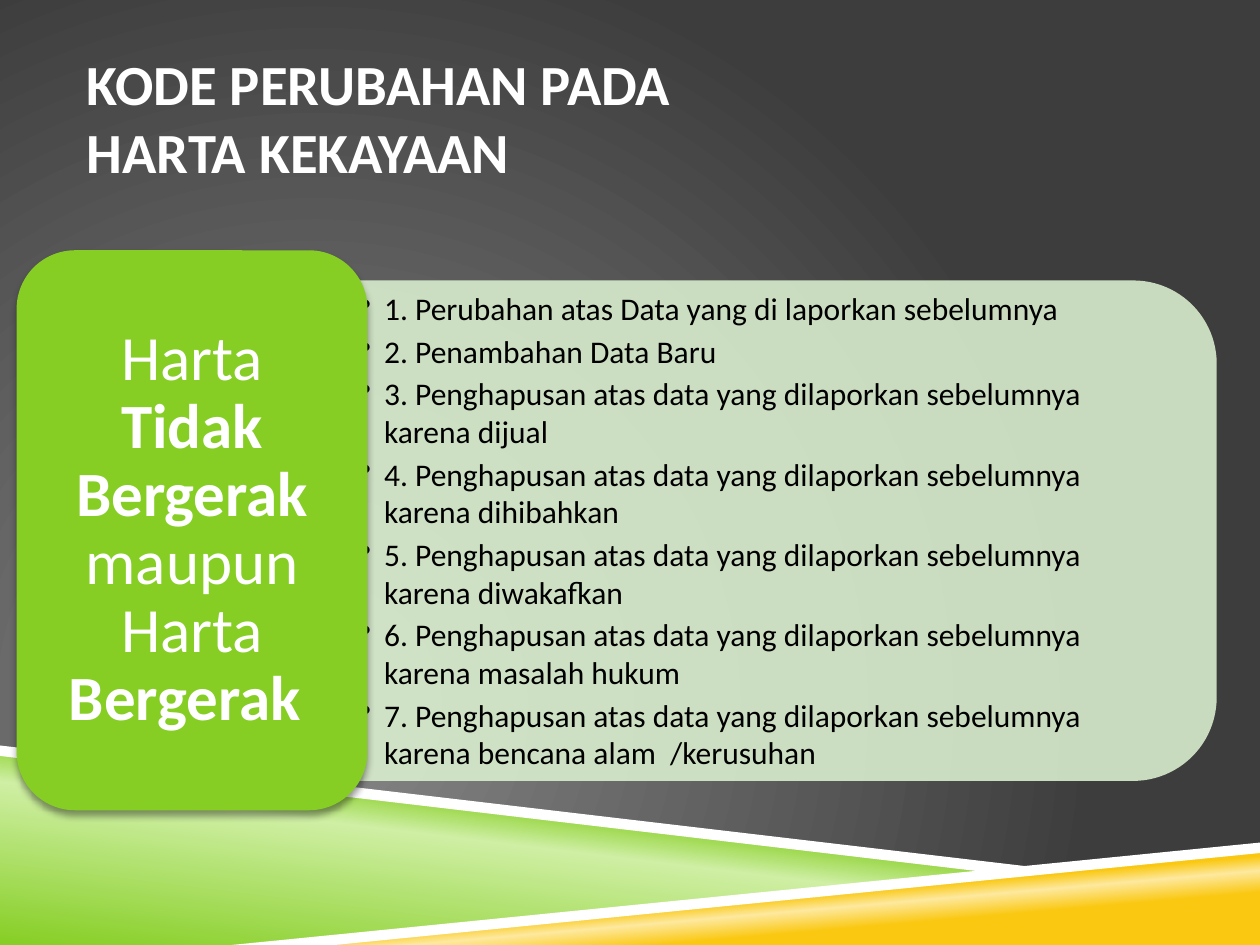
from lxml import etree
from pptx import Presentation
from pptx.dml.color import RGBColor
from pptx.enum.shapes import MSO_SHAPE
from pptx.enum.text import MSO_ANCHOR, MSO_AUTO_SIZE, PP_ALIGN
from pptx.oxml import parse_xml
from pptx.oxml.ns import nsdecls, qn
from pptx.util import Pt

ROUND_RECT = MSO_SHAPE.ROUNDED_RECTANGLE
ROUND_TOP = MSO_SHAPE.ROUND_2_SAME_RECTANGLE
MIDDLE = MSO_ANCHOR.MIDDLE
NO_AUTOFIT = MSO_AUTO_SIZE.NONE
LEFT, CENTER = PP_ALIGN.LEFT, PP_ALIGN.CENTER
FONT = "Calibri"
GREEN, YELLOW, WHITE = "86CE24", "FAC810", "FFFFFF"


def color(hex_code):
    return RGBColor.from_string(hex_code)


def set_gradient(parent, stops, direction):
    """Replace the solid fill inside parent with a gradient."""
    stop_xml = "".join(
        f'<a:gs pos="{pos * 1000}"><a:srgbClr val="{hex_code}"/></a:gs>'
        for pos, hex_code in stops)
    solid = parent.find(qn("a:solidFill"))
    parent.replace(solid, parse_xml(
        f'<a:gradFill {nsdecls("a")} rotWithShape="1">'
        f"<a:gsLst>{stop_xml}</a:gsLst>{direction}</a:gradFill>"))


prs = Presentation()
prs.slide_width, prs.slide_height = Pt(720), Pt(540)
slide = prs.slides.add_slide(prs.slide_layouts[5])
shapes = slide.shapes

# Background: dark radial gradient
slide.background.fill.solid()
set_gradient(
    slide.element.find(".//" + qn("p:bgPr")),
    [(0, "878787"), (100, "3D3D3D")],
    '<a:path path="circle">'
    '<a:fillToRect l="50000" t="100000" r="100000" b="50000"/></a:path>')

# Coloured wedges and their white edges along the bottom
wedges = [
    ([(0, 430), (570, 498), (144, 540), (0, 540)],
     [(0, GREEN), (52, "CFEFA4"), (66, GREEN)], 277),
    ([(142.5, 540), (720, 484), (720, 540)],
     [(28, YELLOW), (40, "FDE99F"), (48, YELLOW)], 265),
    ([(0, 426), (0, 432), (569, 499), (599, 496.5)], None, None),
    ([(720, 481.5), (132.5, 540), (191.5, 540), (720, 487.5)], None, None),
]
for points, stops, angle in wedges:
    corners = [(Pt(x), Pt(y)) for x, y in points]
    outline = shapes.build_freeform(*corners[0])
    outline.add_line_segments(corners[1:], close=True)
    wedge = outline.convert_to_shape()
    wedge.shadow.inherit = False
    wedge.line.fill.background()
    wedge.fill.solid()
    wedge.fill.fore_color.rgb = color(WHITE)
    if stops:
        set_gradient(wedge.element.spPr, stops,
                     f'<a:lin ang="{angle * 60000}" scaled="0"/>')

# Pale panel behind the list, turned so its round side faces right
panel = shapes.add_shape(ROUND_TOP, Pt(298), Pt(49), Pt(286), Pt(508.5))
panel.rotation = 90
panel.shadow.inherit = False
panel.line.fill.background()
panel.fill.solid()
panel.fill.fore_color.rgb = color("D9EDCD")
panel_color = panel.element.spPr.find(".//" + qn("a:srgbClr"))
etree.SubElement(panel_color, qn("a:alpha"), val="90000")

# List of change codes
deletion = "Penghapusan atas data yang dilaporkan sebelumnya karena "
reasons = ["dijual", "dihibahkan", "diwakafkan", "masalah hukum",
           "bencana alam  /kerusuhan"]
codes = ["Perubahan atas Data yang di laporkan sebelumnya",
         "Penambahan Data Baru"] + [deletion + reason for reason in reasons]
code_list = shapes.add_textbox(Pt(186.5), Pt(174), Pt(494), Pt(258)).text_frame
code_list.word_wrap = True
code_list.auto_size = NO_AUTOFIT
code_list.vertical_anchor = MIDDLE
code_list.margin_left = code_list.margin_right = Pt(19.5)
code_list.margin_top = code_list.margin_bottom = Pt(10)
code_list.text = "\n".join(
    f"{number}. {code}" for number, code in enumerate(codes, 1))
for item in code_list.paragraphs:
    item.space_after = Pt(2.7)
    properties = item._p.get_or_add_pPr()
    properties.set("marL", str(Pt(13.5)))
    properties.set("indent", str(-Pt(13.5)))
    etree.SubElement(properties, qn("a:buChar"), char="•")
    item.font.name, item.font.size = FONT, Pt(18)
    item.font.color.rgb = color("000000")

# Green card naming the kinds of property
card = shapes.add_shape(ROUND_RECT, Pt(9.5), Pt(143), Pt(200.5), Pt(320))
card.fill.solid()
card.fill.fore_color.rgb = color(GREEN)
card.line.fill.background()
card.shadow.inherit = False
card.element.spPr.find(qn("a:effectLst")).append(parse_xml(
    f'<a:outerShdw {nsdecls("a")} blurRad="{Pt(4)}" dist="{Pt(3.3)}" '
    'dir="5400000" rotWithShape="0"><a:srgbClr val="000000">'
    '<a:alpha val="40000"/></a:srgbClr></a:outerShdw>'))
card_text = card.text_frame
card_text.word_wrap = True
card_text.vertical_anchor = MIDDLE
card_text.margin_left = card_text.margin_right = Pt(10.8)
card_text.margin_top = card_text.margin_bottom = Pt(5.4)
kinds = card_text.paragraphs[0]
kinds.alignment = CENTER
kinds.line_spacing = 0.9
for words, bold in [("Harta ", False), ("Tidak Bergerak ", True),
                    ("maupun Harta ", False), ("Bergerak ", True)]:
    run = kinds.add_run()
    run.text = words
    run.font.name, run.font.size, run.font.bold = FONT, Pt(36), bold
    run.font.color.rgb = color(WHITE)

# Title
title = shapes.title
title.left, title.top, title.width, title.height = (
    Pt(49.7), Pt(21.6), Pt(610.5), Pt(90))
heading = title.text_frame
heading.text = "KODE PERUBAHAN PADA \vHARTA KEKAYAAN"
heading.word_wrap = True
heading.auto_size = NO_AUTOFIT
heading.vertical_anchor = MIDDLE
heading.margin_left = heading.margin_right = 0
heading.margin_top = heading.margin_bottom = Pt(3.6)
heading_line = heading.paragraphs[0]
heading_line.alignment = LEFT
for run in heading_line.runs:
    run.font.name, run.font.size, run.font.bold = FONT, Pt(32.4), True
    run.font.color.rgb = color(WHITE)

prs.save("out.pptx")
